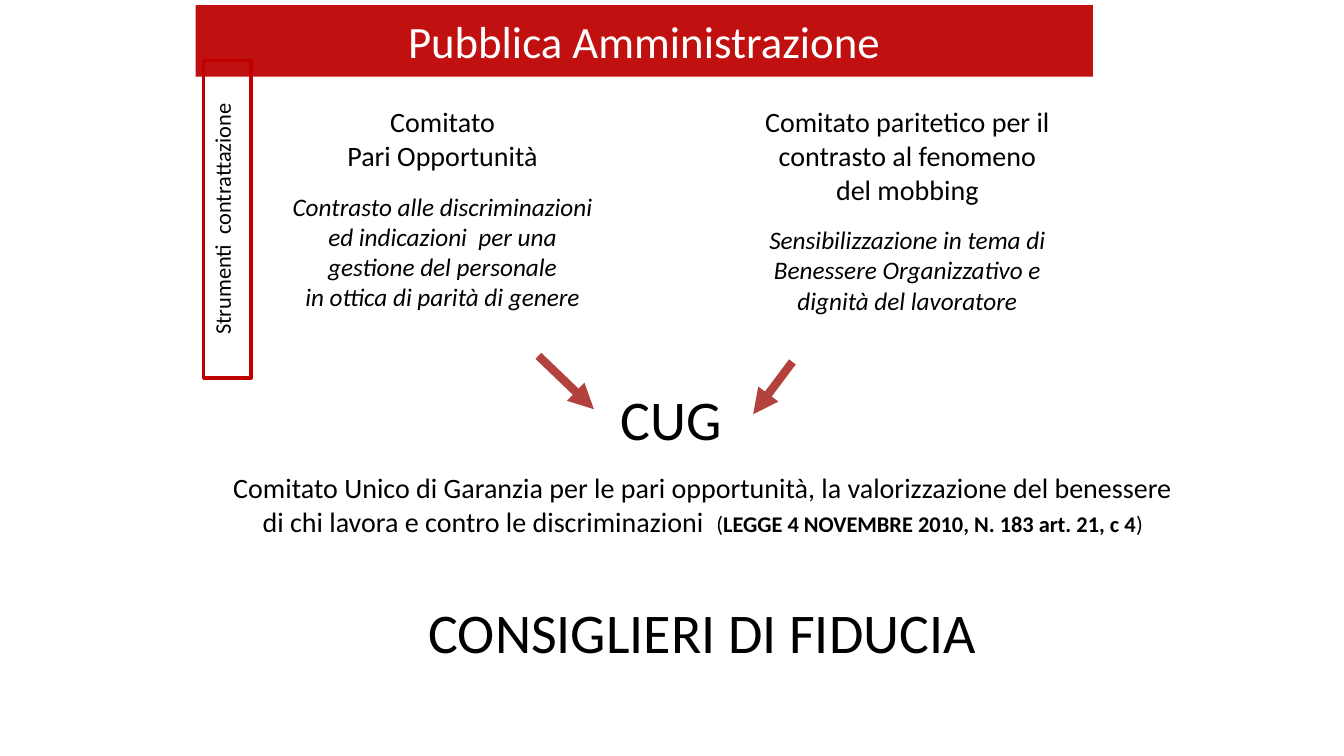
"""Build the slide on equality committees in the public administration."""
from dataclasses import dataclass, field

from lxml import etree
from pptx import Presentation
from pptx import util as u
from pptx.dml.color import RGBColor
from pptx.enum import shapes, text
from pptx.oxml import ns

WIDTH, HEIGHT = u.Inches(13.33), u.Inches(7.5)
HEADING = {"size": u.Pt(20)}
PURPOSE = {"size": u.Pt(18), "italic": True}
DETAIL = {"size": u.Pt(16)}
DISPLAY = {"size": u.Pt(40)}
BANNER = {"size": u.Pt(32)}


@dataclass
class Span:
    """A stretch of text with its font format."""
    words: str
    style: dict


@dataclass
class Line:
    """A paragraph and the points of space above it."""
    spans: list[Span]
    gap: float = 0


@dataclass
class Block:
    """A text block placed in percent of the slide's width and height."""
    place: tuple[float, float, float, float]
    lines: list[Line]
    frame: dict = field(default_factory=dict)
    ink: str = "000000"
    fill: str = ""
    outline: str = ""
    vertical: str = ""


@dataclass
class Arrow:
    """An arrow between two points in percent of the slide."""
    start: tuple[float, float]
    end: tuple[float, float]


def color(code: str) -> RGBColor:
    """Turn a hex string into a colour."""
    return RGBColor.from_string(code)


def across(share: float) -> int:
    """Convert a percentage of the slide's width."""
    return round(WIDTH * share / 100)


def down(share: float) -> int:
    """Convert a percentage of the slide's height."""
    return round(HEIGHT * share / 100)


def apply(target, values: dict) -> None:
    """Set each named attribute on the target."""
    for name, value in values.items():
        setattr(target, name, value)


def single(words: str, style: dict) -> list[Line]:
    """Make a one-paragraph text."""
    return [Line([Span(words, style)])]


def committee(names: list[str], purposes: list[str]) -> list[Line]:
    """List a committee's name lines, then its purpose lines after a gap."""
    return ([Line([Span(name, HEADING)]) for name in names]
            + [Line([Span(purpose, PURPOSE)], 0 if index else 13.5)
               for index, purpose in enumerate(purposes)])


def draw_block(box, block: Block) -> None:
    """Place, format and fill a text shape."""
    left, top, width, height = block.place
    apply(box, {"left": across(left), "top": down(top),
                "width": across(width), "height": down(height)})
    if block.fill:
        box.fill.solid()
        box.fill.fore_color.rgb = color(block.fill)
    if block.outline:
        box.line.color.rgb = color(block.outline)
        box.line.width = u.Pt(2.25)
    frame = box.text_frame
    apply(frame, {"word_wrap": False, "auto_size": text.MSO_AUTO_SIZE.NONE,
                  **block.frame})
    if block.vertical:
        box.element.txBody.bodyPr.set("vert", block.vertical)
    for index, line in enumerate(block.lines):
        para = frame.add_paragraph() if index else frame.paragraphs[0]
        apply(para, {"alignment": text.PP_ALIGN.CENTER,
                     "space_before": u.Pt(line.gap)})
        for piece in line.spans:
            span = para.add_run()
            span.text = piece.words
            apply(span.font, {"name": "Calibri", **piece.style})
            span.font.color.rgb = color(block.ink)


def draw_arrow(page, arrow: Arrow) -> None:
    """Draw a thick red arrow without a shadow."""
    (left, top), (right, bottom) = arrow.start, arrow.end
    link = page.shapes.add_connector(
        shapes.MSO_CONNECTOR.STRAIGHT,
        across(left), down(top), across(right), down(bottom))
    link.line.color.rgb = color("B3423F")
    link.line.width = u.Pt(6)
    etree.SubElement(link.line._get_or_add_ln(), ns.qn("a:tailEnd"), type="triangle")
    etree.SubElement(link.element.spPr, ns.qn("a:effectLst"))


TITLE = Block((14.55, 0.67, 66.77, 9.47),
              single("Pubblica Amministrazione", BANNER),
              {"vertical_anchor": text.MSO_ANCHOR.MIDDLE},
              ink="FFFFFF", fill="C01010")

BLOCKS = [
    Block((16.35, 61.6, 71.87, 10.27), [Line([
        Span("Comitato Unico di Garanzia per le pari opportunità, la valorizzazione "
             "del benessere di chi lavora e contro le discriminazioni  ", HEADING),
        Span("(", DETAIL),
        Span("LEGGE 4 NOVEMBRE 2010, N. 183 art. 21, c 4", {**DETAIL, "bold": True}),
        Span(")", DETAIL)])], {"word_wrap": True}),
    Block((20.7, 13.2, 24.46, 28.93), committee(
        ["Comitato", "Pari Opportunità"],
        ["Contrasto alle discriminazioni", "ed indicazioni  per una",
         "gestione del personale", "in ottica di parità di genere"])),
    Block((55.81, 13.2, 23.41, 29.33), committee(
        ["Comitato paritetico per il", "contrasto al fenomeno", "del mobbing"],
        ["Sensibilizzazione in tema di", "Benessere Organizzativo e",
         "dignità del lavoratore"])),
    Block((45.39, 50.27, 9.15, 10.27), single("CUG", DISPLAY)),
    Block((15.15, 8, 3.53, 42), single("Strumenti  contrattazione", DETAIL),
          {"word_wrap": True}, outline="C00000", vertical="vert270"),
    Block((30.91, 78.4, 42.69, 10.27), single("CONSIGLIERI DI FIDUCIA", DISPLAY)),
]

ARROWS = [Arrow((40.06, 47.07), (44.19, 54.13)),
          Arrow((58.96, 47.87), (56.04, 54.8))]


def main() -> None:
    """Build and save the deck."""
    deck = Presentation()
    apply(deck, {"slide_width": WIDTH, "slide_height": HEIGHT})
    page = deck.slides.add_slide(deck.slide_layouts.get_by_name("Title Only"))
    draw_block(page.shapes.title, TITLE)
    for arrow in ARROWS:
        draw_arrow(page, arrow)
    for block in BLOCKS:
        draw_block(page.shapes.add_textbox(0, 0, 0, 0), block)
    deck.save("out.pptx")


if __name__ == "__main__":
    main()
